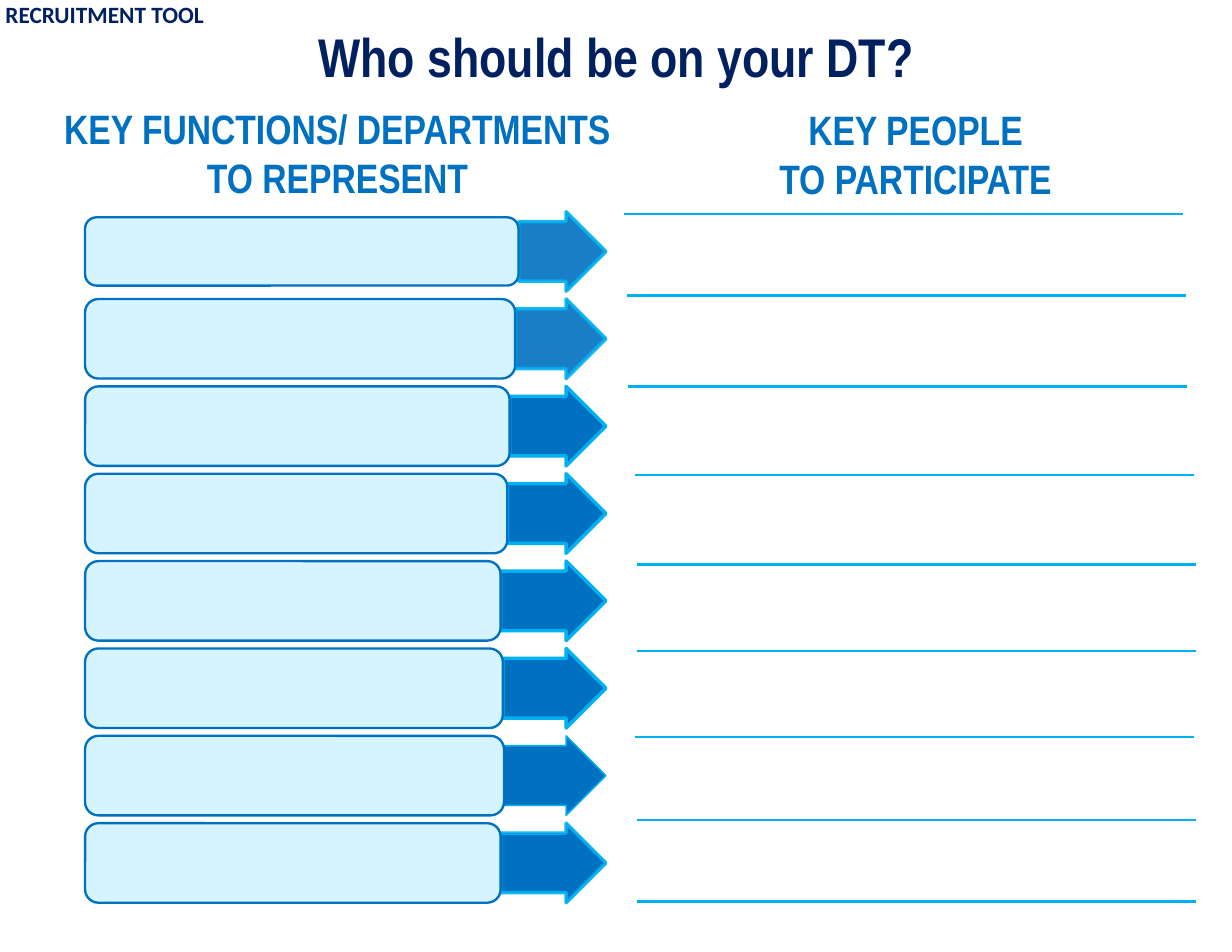
import pptx
import pptx.util
import pptx.dml.color
import pptx.enum.shapes
import pptx.enum.text
import pptx.oxml
import pptx.oxml.ns
from pptx.util import Inches

COLORS = {"navy": "002060", "blue": "0070C0", "cyan": "00B0F0", "pale": "D5F4FF"}
ALIGN = pptx.enum.text.PP_ALIGN
ANCHOR = pptx.enum.text.MSO_ANCHOR
SHAPE = pptx.enum.shapes.MSO_SHAPE

# Lines, (left, top, width, height), alignment, anchor, line spacing, font
TEXTS = [
    (["Who should be on your DT?"], (0.76, 0.05, 9.49, 0.97),
     ALIGN.CENTER, ANCHOR.MIDDLE, 0.9, ("Arial Narrow", 35, "navy")),
    (["KEY FUNCTIONS/ DEPARTMENTS", "TO REPRESENT"], (0.35, 1.01, 5.33, 0.84),
     ALIGN.CENTER, ANCHOR.BOTTOM, 1.0, ("Arial Narrow", 26.4, "blue")),
    (["KEY PEOPLE", "TO PARTICIPATE"], (5.79, 0.99, 4.77, 0.87),
     ALIGN.CENTER, ANCHOR.BOTTOM, 1.0, ("Arial Narrow", 26.4, "blue")),
    (["RECRUITMENT TOOL"], (-0.05, -0.34, 9.49, 0.97),
     ALIGN.LEFT, ANCHOR.MIDDLE, 0.9, ("Calibri", 15, "navy")),
]

# Box width, arrow outline in points, arrow fill opacity, outline opacity (percent)
ROWS = [
    (3.87, 2.25, 90, 90),
    (3.84, 2.25, 90, 90),
    (3.79, 2.25, 100, 100),
    (3.77, 2.25, 100, 100),
    (3.71, 2.25, 100, 100),
    (3.73, 2.25, 100, 100),
    (3.74, 1, 100, 100),
    (3.71, 2.25, 100, 90),
]
BOX_LEFT, ARROW_TIP = 0.76, 5.41
FIRST_TOP, ROW_STEP, ROW_HEIGHT = 1.89, 0.78, 0.71
FIRST_BOX_INSET = 0.05

# Left end and height of each writing line
WRITING_LINES = [(5.57, 1.91), (5.6, 2.64), (5.61, 3.45), (5.67, 4.24), (5.69, 5.04),
                 (5.69, 5.81), (5.67, 6.58), (5.69, 7.32), (5.69, 8.05)]
WRITING_WIDTH = 4.99


def rgb(name):
    return pptx.dml.color.RGBColor.from_string(COLORS[name])


def set_opacity(parent, percent):
    """Add an alpha value to the solid fill directly inside parent."""
    if percent < 100:
        color = parent.find(pptx.oxml.ns.qn("a:solidFill"))[0]
        alpha = pptx.oxml.parse_xml(
            f'<a:alpha {pptx.oxml.ns.nsdecls("a")} val="{percent * 1000}"/>')
        color.append(alpha)


def add_text(page, lines, place, align, anchor, spacing, font):
    frame = page.shapes.add_textbox(*map(Inches, place)).text_frame
    frame.word_wrap = True
    frame.vertical_anchor = anchor
    face, size, color = font
    for index, line in enumerate(lines):
        para = frame.paragraphs[0] if index == 0 else frame.add_paragraph()
        para.alignment, para.line_spacing = align, spacing
        span = para.add_run()
        span.text = line
        for name, value in {"name": face, "size": pptx.util.Pt(size), "bold": True}.items():
            setattr(span.font, name, value)
        span.font.color.rgb = rgb(color)


def add_block(page, kind, place, fill, outline, width):
    block = page.shapes.add_shape(kind, *map(Inches, place))
    block.shadow.inherit = False
    block.fill.solid()
    block.fill.fore_color.rgb = rgb(fill)
    block.line.color.rgb = rgb(outline)
    block.line.width = pptx.util.Pt(width)
    return block


def add_row(page, index, box_width, outline, fill_opacity, line_opacity):
    top = FIRST_TOP + index * ROW_STEP
    box_right = BOX_LEFT + box_width
    arrow = add_block(page, SHAPE.RIGHT_ARROW,
                      (box_right, top, ARROW_TIP - box_right, ROW_HEIGHT),
                      "blue", "cyan", outline)
    arrow.adjustments[0], arrow.adjustments[1] = 0.75, 0.5
    properties = arrow.element.spPr
    set_opacity(properties, fill_opacity)
    set_opacity(properties.find(pptx.oxml.ns.qn("a:ln")), line_opacity)
    inset = FIRST_BOX_INSET if index == 0 else 0
    add_block(page, SHAPE.ROUNDED_RECTANGLE,
              (BOX_LEFT, top + inset, box_width, ROW_HEIGHT - 2 * inset),
              "pale", "blue", 1.5)


def add_writing_line(page, left, height):
    line = page.shapes.add_connector(
        pptx.enum.shapes.MSO_CONNECTOR.STRAIGHT,
        *map(Inches, (left, height, left + WRITING_WIDTH, height)))
    line.line.color.rgb = rgb("cyan")
    line.line.width = pptx.util.Pt(1.5)
    line.element.spPr.append(
        pptx.oxml.parse_xml(f'<a:effectLst {pptx.oxml.ns.nsdecls("a")}/>'))


def main():
    deck = pptx.Presentation()
    deck.slide_width, deck.slide_height = Inches(11), Inches(8.5)
    page = deck.slides.add_slide(deck.slide_layouts[6])
    for text in TEXTS:
        add_text(page, *text)
    for index, row in enumerate(ROWS):
        add_row(page, index, *row)
    for left, height in WRITING_LINES:
        add_writing_line(page, left, height)
    deck.save("out.pptx")


if __name__ == "__main__":
    main()
